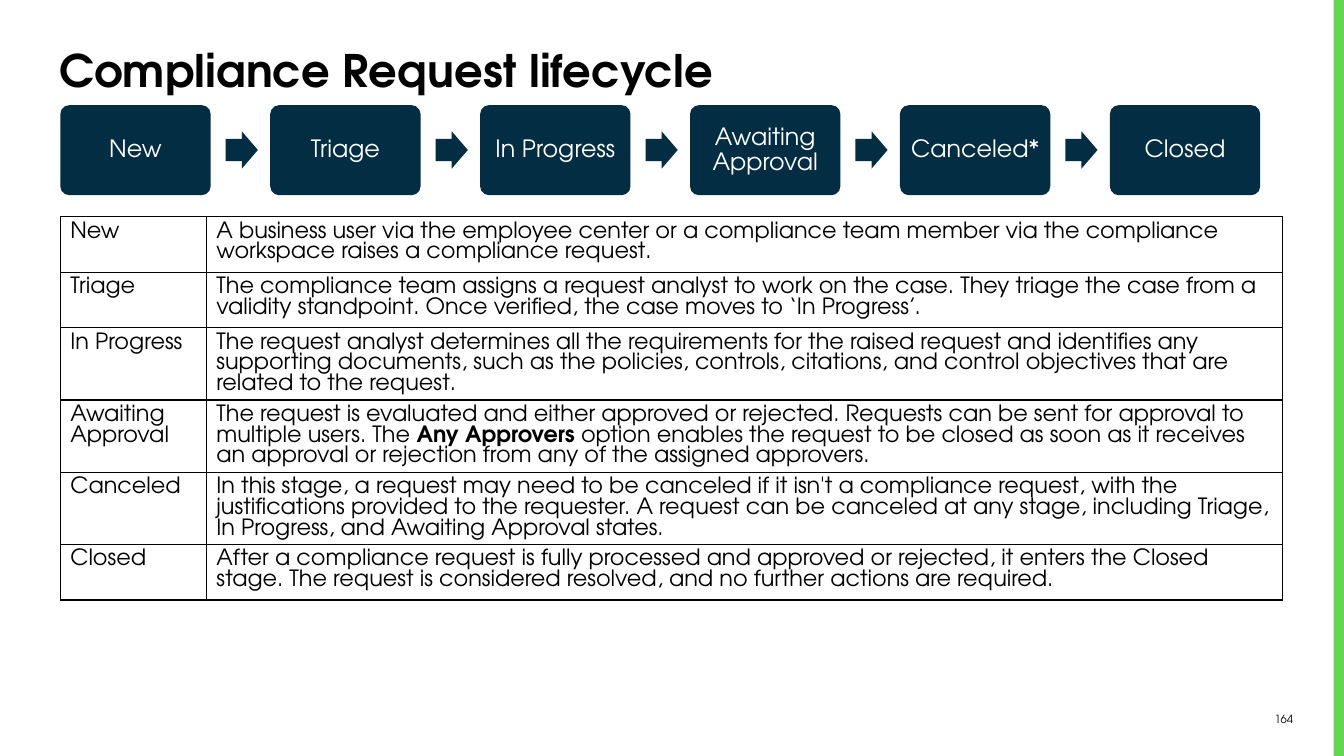
from dataclasses import dataclass

from lxml.etree import SubElement
from pptx import Presentation
from pptx.dml.color import RGBColor
from pptx.enum.shapes import MSO_SHAPE as Shape
from pptx.enum.text import MSO_ANCHOR as Anchor, PP_ALIGN as Align
from pptx.oxml.ns import qn
from pptx.util import Cm, Pt

FONT = "TeX Gyre Adventor"
COLORS = {"navy": "032D42", "green": "62D84E", "black": "000000", "white": "FFFFFF"}


@dataclass
class Stage:
    label: str
    name: str
    description: str


STAGES = [
    Stage("New", "New",
          "A business user via the employee center or a compliance team member via the "
          "compliance workspace raises a compliance request."),
    Stage("Triage", "Triage",
          "The compliance team assigns a request analyst to work on the case. They triage "
          "the case from a validity standpoint. Once verified, the case moves to "
          "‘In Progress’."),
    Stage("In Progress", "In Progress",
          "The request analyst determines all the requirements for the raised request and "
          "identifies any supporting documents, such as the policies, controls, citations, "
          "and control objectives that are related to the request."),
    Stage("Awaiting Approval", "Awaiting Approval",
          "The request is evaluated and either approved or rejected. Requests can be sent "
          "for approval to multiple users. The **Any Approvers** option enables the request "
          "to be closed as soon as it receives an approval or rejection from any of the "
          "assigned approvers."),
    Stage("Canceled*", "Canceled",
          "In this stage, a request may need to be canceled if it isn't a compliance "
          "request, with the justifications provided to the requester. A request can be "
          "canceled at any stage, including Triage, In Progress, and Awaiting Approval "
          "states."),
    Stage("Closed", "Closed",
          "After a compliance request is fully processed and approved or rejected, it "
          "enters the Closed stage. The request is considered resolved, and no further "
          "actions are required."),
]

LEFT, PITCH = 1.52, 5.29
BOX_TOP, BOX_W, BOX_H = 2.65, 3.79, 2.27
ARROW_OFFSET, ARROW_TOP, ARROW_W, ARROW_H = 4.17, 3.31, 0.81, 0.94
TABLE_TOP, COLUMNS, ROW_H = 5.46, (3.68, 27.12), 1.4


def rgb(color: str) -> RGBColor:
    return RGBColor.from_string(COLORS[color])


def write(tf, text: str, *, size: float, color: str = "black", bold: bool = False,
          align=Align.LEFT, anchor=Anchor.MIDDLE, spacing=None) -> None:
    tf.word_wrap = True
    tf.vertical_anchor = anchor
    p = tf.paragraphs[0]
    p.alignment = align
    p.line_spacing = spacing
    for i, part in enumerate(text.split("**")):
        r = p.add_run()
        r.text = part
        r.font.name = FONT
        r.font.size = Pt(size)
        r.font.bold = bold or i % 2 == 1
        r.font.color.rgb = rgb(color)


def add_block(s, kind, left: float, top: float, width: float, height: float,
              color: str, adjustments: tuple[float, ...] = ()):
    sp = s.shapes.add_shape(kind, Cm(left), Cm(top), Cm(width), Cm(height))
    sp.shadow.inherit = False
    sp.fill.solid()
    sp.fill.fore_color.rgb = rgb(color)
    sp.line.fill.background()
    for i, value in enumerate(adjustments):
        sp.adjustments[i] = value
    return sp


def add_borders(cell) -> None:
    properties = cell._tc.get_or_add_tcPr()
    for i, side in enumerate(("lnL", "lnR", "lnT", "lnB")):
        line = SubElement(properties, qn(f"a:{side}"), w=str(Pt(1)))
        fill = SubElement(line, qn("a:solidFill"))
        SubElement(fill, qn("a:srgbClr"), val=COLORS["black"])
        properties.insert(i, line)


def add_flow(s, stages: list[Stage]) -> None:
    for i, stage in enumerate(stages):
        x = LEFT + i * PITCH
        sp = add_block(s, Shape.ROUNDED_RECTANGLE, x, BOX_TOP, BOX_W, BOX_H, "navy", (0.1,))
        sp.text_frame.margin_left = sp.text_frame.margin_right = Cm(0.2)
        write(sp.text_frame, stage.label, size=17, color="white",
              align=Align.CENTER, spacing=0.9)
        if i < len(stages) - 1:
            add_block(s, Shape.RIGHT_ARROW, x + ARROW_OFFSET, ARROW_TOP,
                      ARROW_W, ARROW_H, "navy", (0.6, 0.5))


def add_stage_table(s, stages: list[Stage]) -> None:
    table = s.shapes.add_table(len(stages), len(COLUMNS), Cm(LEFT), Cm(TABLE_TOP),
                               Cm(sum(COLUMNS)), Cm(ROW_H * len(stages))).table
    table.first_row = table.horz_banding = False
    for column, width in zip(table.columns, COLUMNS):
        column.width = Cm(width)
    for row, stage in zip(table.rows, stages):
        row.height = Cm(ROW_H)
        for cell, text in zip(row.cells, (stage.name, stage.description)):
            cell.fill.background()
            add_borders(cell)
            cell.vertical_anchor = Anchor.TOP
            write(cell.text_frame, text, size=16, anchor=Anchor.TOP, spacing=Pt(14.8))


def main() -> None:
    prs = Presentation()
    prs.slide_width, prs.slide_height = Cm(33.87), Cm(19.05)
    s = prs.slides.add_slide(prs.slide_layouts[5])

    add_block(s, Shape.RECTANGLE, 33.61, 0, 0.26, 19.05, "green")
    number = s.shapes.add_textbox(Cm(30.71), Cm(17.81), Cm(2.13), Cm(0.64))
    write(number.text_frame, "164", size=8, align=Align.RIGHT)

    title = s.shapes.title
    title.left, title.top, title.width, title.height = Cm(1.24), Cm(0.86), Cm(31.09), Cm(1.78)
    write(title.text_frame, "Compliance Request lifecycle", size=32, bold=True)

    add_flow(s, STAGES)
    add_stage_table(s, STAGES)
    prs.save("out.pptx")


if __name__ == "__main__":
    main()
